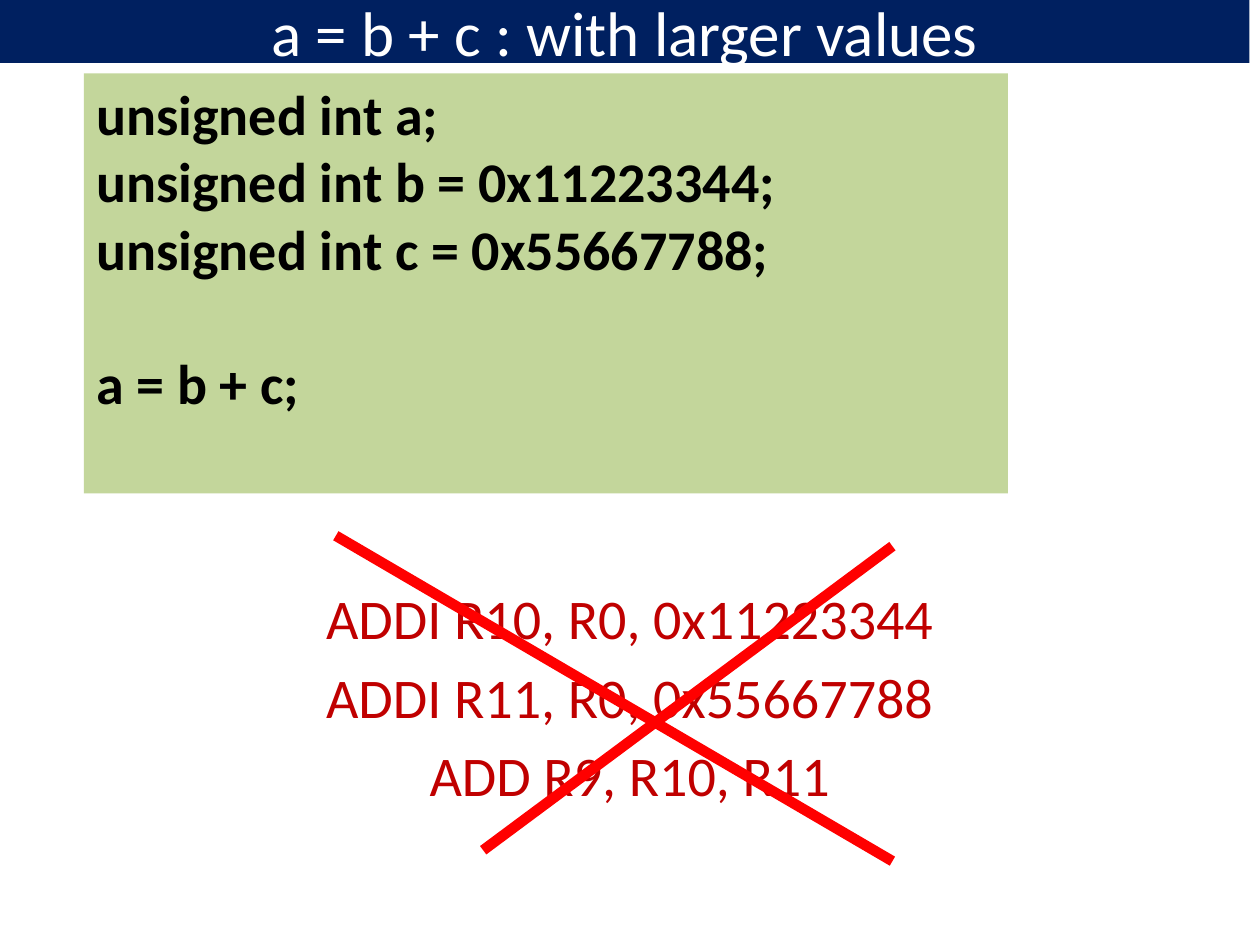
from dataclasses import dataclass

from lxml import etree
from pptx import Presentation
from pptx.dml.color import RGBColor
from pptx.enum.shapes import MSO_CONNECTOR, MSO_SHAPE
from pptx.enum.text import MSO_ANCHOR, PP_ALIGN
from pptx.oxml.ns import qn
from pptx.util import Cm, Pt

RECTANGLE = MSO_SHAPE.RECTANGLE
STRAIGHT = MSO_CONNECTOR.STRAIGHT
TOP, MIDDLE = MSO_ANCHOR.TOP, MSO_ANCHOR.MIDDLE
LEFT, CENTER = PP_ALIGN.LEFT, PP_ALIGN.CENTER


@dataclass(frozen=True)
class Theme:
    font: str = "Calibri"
    navy: RGBColor = RGBColor(0x00, 0x20, 0x60)
    green: RGBColor = RGBColor(0xC3, 0xD6, 0x9B)
    white: RGBColor = RGBColor(0xFF, 0xFF, 0xFF)
    black: RGBColor = RGBColor(0x00, 0x00, 0x00)
    dark_red: RGBColor = RGBColor(0xC0, 0x00, 0x00)
    red: RGBColor = RGBColor(0xFF, 0x00, 0x00)
    title_size: Pt = Pt(36)
    text_size: Pt = Pt(32)
    blank_line: Pt = Pt(38.4)
    line_gap: Pt = Pt(6.4)
    cross_width: Pt = Pt(6)


THEME = Theme()


def add_panel(slide, box, fill):
    shape = slide.shapes.add_shape(RECTANGLE, *map(Cm, box))
    shape.shadow.inherit = False
    shape.fill.solid()
    shape.fill.fore_color.rgb = fill
    shape.line.fill.background()
    return shape.text_frame


def write_lines(frame, lines, color, size, alignment=LEFT, anchor=TOP, bold=False):
    frame.word_wrap = True
    frame.vertical_anchor = anchor
    for index, (text, space_before) in enumerate(lines):
        paragraph = frame.add_paragraph() if index else frame.paragraphs[0]
        paragraph.text = text
        paragraph.alignment = alignment
        paragraph.space_before = space_before
        paragraph.font.name = THEME.font
        paragraph.font.size = size
        paragraph.font.bold = bold
        paragraph.font.color.rgb = color


def add_title(slide, box, title):
    frame = add_panel(slide, box, THEME.navy)
    write_lines(frame, [(title, Pt(0))], THEME.white, THEME.title_size, CENTER, MIDDLE)


def add_source_code(slide, box, declarations, statement):
    frame = add_panel(slide, box, THEME.green)
    lines = [(text, Pt(0)) for text in declarations]
    lines.append((statement, THEME.blank_line))
    write_lines(frame, lines, THEME.black, THEME.text_size, bold=True)


def add_assembly(slide, box, instructions):
    frame = slide.shapes.add_textbox(*map(Cm, box)).text_frame
    lines = [
        (text, THEME.line_gap if index else Pt(0))
        for index, text in enumerate(instructions)
    ]
    write_lines(frame, lines, THEME.dark_red, THEME.text_size, CENTER)


def add_cross(slide, box):
    left, top, width, height = box
    right, bottom = left + width, top + height
    strokes = [
        (left, top, right, bottom),
        (left + 2.97, bottom - 0.22, right, top + 0.21),
    ]
    group = slide.shapes.add_group_shape()
    for stroke in strokes:
        connector = group.shapes.add_connector(STRAIGHT, *map(Cm, stroke))
        connector.line.color.rgb = THEME.red
        connector.line.width = THEME.cross_width
        properties = connector._element.find(qn("p:spPr"))
        etree.SubElement(properties, qn("a:effectLst"))


def main():
    presentation = Presentation()
    presentation.slide_width = Cm(25.4)
    presentation.slide_height = Cm(19.05)
    slide = presentation.slides.add_slide(presentation.slide_layouts[6])
    add_title(slide, (0, 0, 25.19, 1.27), "a = b + c : with larger values")
    add_assembly(
        slide,
        (0, 11.64, 25.4, 7.41),
        [
            "ADDI R10, R0, 0x11223344",
            "ADDI R11, R0, 0x55667788",
            "ADD R9, R10, R11",
        ],
    )
    add_source_code(
        slide,
        (1.69, 1.48, 18.63, 8.47),
        [
            "unsigned int a;",
            "unsigned int b = 0x11223344;",
            "unsigned int c = 0x55667788;",
        ],
        "a = b + c;",
    )
    add_cross(slide, (6.77, 10.8, 11.22, 6.56))
    presentation.save("out.pptx")


if __name__ == "__main__":
    main()
